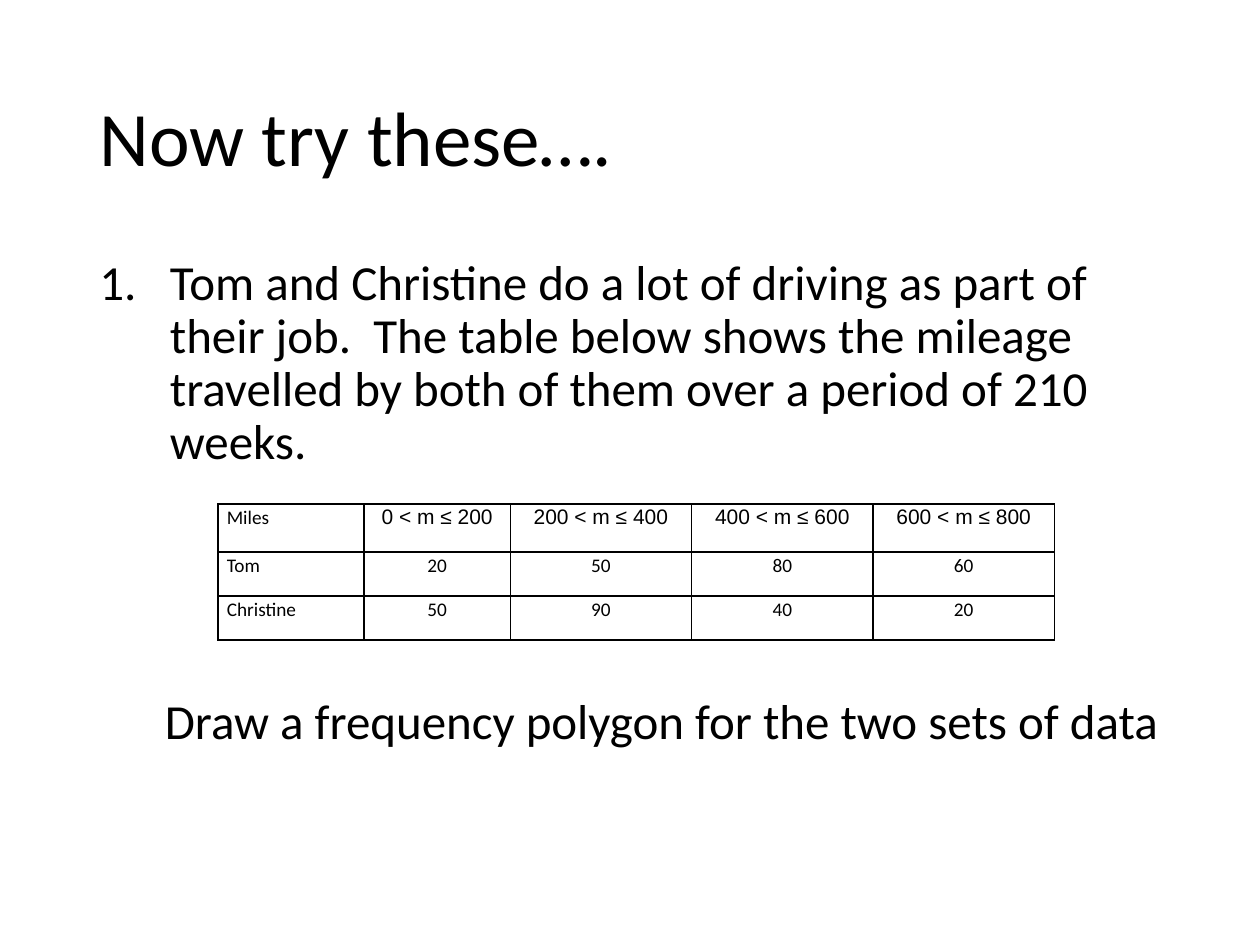
from dataclasses import dataclass

from lxml import etree
from pptx import Presentation
from pptx import util as u
from pptx.dml.color import RGBColor
from pptx.enum import text
from pptx.oxml import ns

WIDE, HIGH = 10, 7.5
INK = "000000"
LEFT, MID = text.PP_ALIGN.LEFT, text.PP_ALIGN.CENTER


@dataclass
class Style:
    size: float
    face: str = "Calibri"
    align: int = LEFT
    lead: float = 0.9
    gap: float = 0


TITLE = Style(44)
TASK = Style(28)
CLOSE = Style(28, gap=130)
LABEL = Style(11, lead=1.07)
COUNT = Style(11, align=MID, lead=1.07)
RANGE = Style(12, "Arial", MID, 1.07)

COLS = (1.16, 1.16, 1.44, 1.44, 1.44)
ROWS = (0.38, 0.35, 0.35)
DATA = (
    ("Miles", "0 < m ≤ 200", "200 < m ≤ 400", "400 < m ≤ 600", "600 < m ≤ 800"),
    ("Tom", "20", "50", "80", "60"),
    ("Christine", "50", "90", "40", "20"),
)


def put(item, vals: dict) -> None:
    for key, val in vals.items():
        setattr(item, key, val)


def ink(tone: str) -> RGBColor:
    return RGBColor.from_string(tone)


def add(top, tag: str, **vals):
    return etree.SubElement(top, ns.qn(tag), vals)


def write(para, words: str, style: Style) -> None:
    put(para, dict(alignment=style.align, line_spacing=style.lead,
                   space_before=u.Pt(style.gap), space_after=u.Pt(0)))
    run = para.add_run()
    run.text = words
    put(run.font, dict(name=style.face, size=u.Pt(style.size)))
    run.font.color.rgb = ink(INK)


def indent(para, left: float, first: float = 0) -> None:
    prop = para._p.get_or_add_pPr()
    prop.set("marL", str(u.Inches(left)))
    prop.set("indent", str(u.Inches(first)))


def border(cell) -> None:
    prop = cell._tc.get_or_add_tcPr()
    for side in "LRTB":
        line = add(prop, f"a:ln{side}", w=str(u.Pt(1)))
        add(add(line, "a:solidFill"), "a:srgbClr", val=INK)


def title(slide) -> None:
    head = slide.shapes.title
    put(head, dict(left=u.Inches(0.69), top=u.Inches(0.4),
                   width=u.Inches(8.62), height=u.Inches(1.45)))
    put(head.text_frame, dict(word_wrap=True, auto_size=text.MSO_AUTO_SIZE.NONE,
                              vertical_anchor=text.MSO_ANCHOR.MIDDLE))
    write(head.text_frame.paragraphs[0], "Now try these….", TITLE)


def body(slide) -> None:
    box = slide.shapes.add_textbox(
        *map(u.Inches, (0.69, 2, 8.62, 4.76))).text_frame
    box.word_wrap = True
    task, close = box.paragraphs[0], box.add_paragraph()
    indent(task, 0.56, -0.56)
    add(task._p.get_or_add_pPr(), "a:buFont", typeface="+mj-lt")
    add(task._p.get_or_add_pPr(), "a:buAutoNum", type="arabicPeriod")
    write(task, "Tom and Christine do a lot of driving as part of their job.  "
          "The table below shows the mileage travelled by both of them "
          "over a period of 210 weeks.", TASK)
    indent(close, 0.52)
    write(close, "Draw a frequency polygon for the two sets of data", CLOSE)


def grid(slide) -> None:
    table = slide.shapes.add_table(
        len(ROWS), len(COLS),
        *map(u.Inches, (1.73, 4, sum(COLS), sum(ROWS)))).table
    put(table, dict(first_row=False, horz_banding=False))
    for col, width in zip(table.columns, COLS):
        col.width = u.Inches(width)
    for r, (row, height) in enumerate(zip(table.rows, ROWS)):
        row.height = u.Inches(height)
        for c, cell in enumerate(row.cells):
            put(cell, dict(margin_left=u.Inches(0.07), margin_right=u.Inches(0.07),
                           margin_top=0, margin_bottom=0))
            border(cell)
            cell.fill.background()
            style = LABEL if c == 0 else RANGE if r == 0 else COUNT
            write(cell.text_frame.paragraphs[0], DATA[r][c], style)


def main() -> None:
    """Build the frequency polygon exercise slide."""
    deck = Presentation()
    put(deck, dict(slide_width=u.Inches(WIDE), slide_height=u.Inches(HIGH)))
    slide = deck.slides.add_slide(deck.slide_layouts[5])
    title(slide)
    body(slide)
    grid(slide)
    deck.save("out.pptx")


if __name__ == "__main__":
    main()
